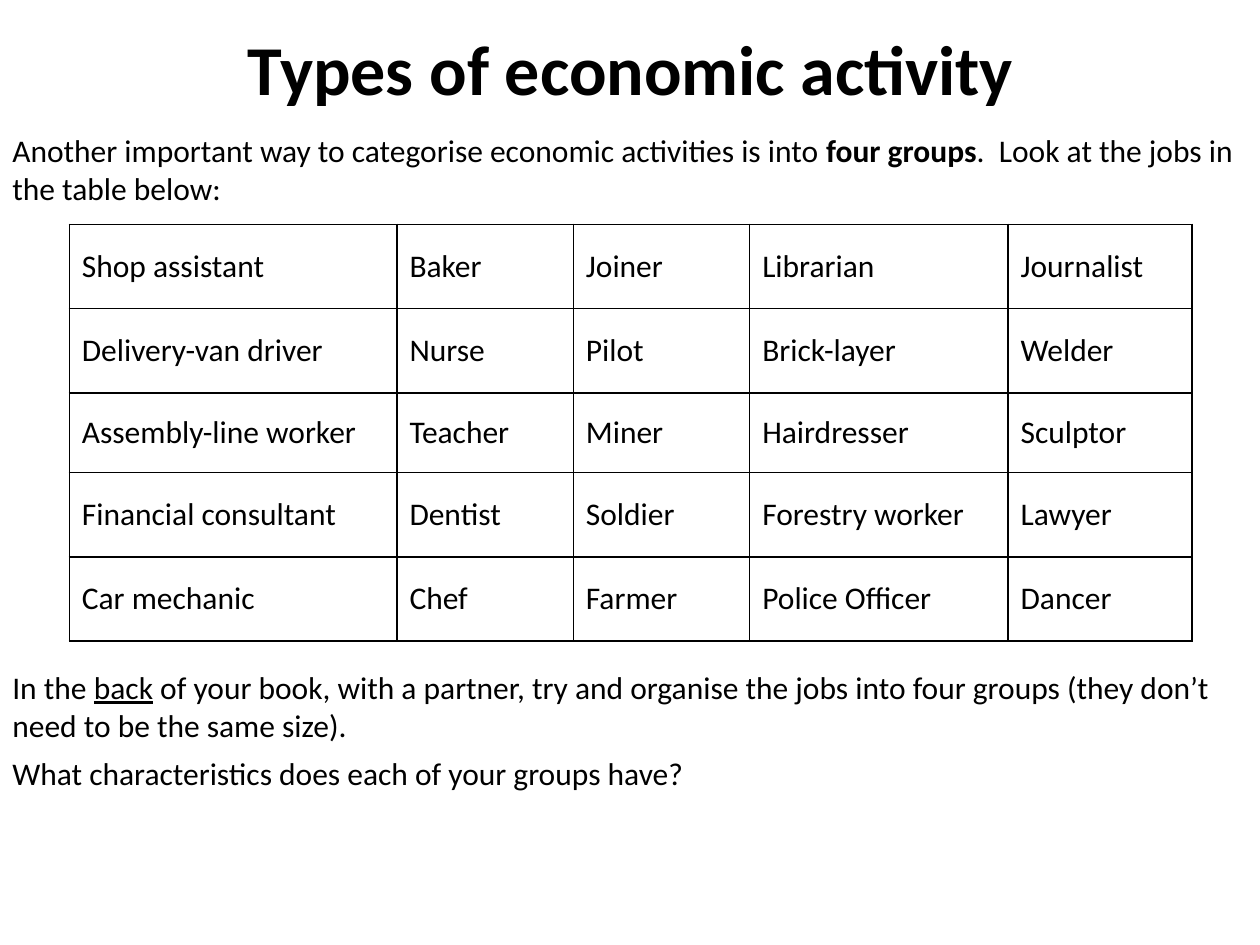
"""Build a slide on types of economic activity with a table of jobs."""
from dataclasses import dataclass

from lxml import etree
from pptx import Presentation
from pptx import util as u
from pptx.dml.color import RGBColor
from pptx.enum import text
from pptx.oxml import ns

PX = 9144


@dataclass(frozen=True)
class Theme:
    font: str = "Calibri"
    ink: str = "000000"
    head: int = 40
    body: int = 18
    line: int = 1


@dataclass(frozen=True)
class Box:
    left: int
    top: int
    width: int
    height: int

    def emu(self) -> list[int]:
        return [v * PX for v in (self.left, self.top, self.width, self.height)]


@dataclass(frozen=True)
class Part:
    words: str
    bold: bool = False
    under: bool = False


@dataclass(frozen=True)
class Note:
    box: Box
    paras: list[list[Part]]
    after: int = 0


THEME = Theme()
TITLE = Box(20, 16, 961, 75)
GRID = Box(55, 178, 891, 331)
COLS = [260, 140, 140, 205, 146]
ROWS = [67, 67, 63, 67, 67]
JOBS = [
    ["Shop assistant", "Baker", "Joiner", "Librarian", "Journalist"],
    ["Delivery-van driver", "Nurse", "Pilot", "Brick-layer", "Welder"],
    ["Assembly-line worker", "Teacher", "Miner", "Hairdresser", "Sculptor"],
    ["Financial consultant", "Dentist", "Soldier", "Forestry worker", "Lawyer"],
    ["Car mechanic", "Chef", "Farmer", "Police Officer", "Dancer"],
]
NOTES = [
    Note(Box(0, 99, 1000, 71), [[
        Part("Another important way to categorise economic activities is into "),
        Part("four groups", bold=True),
        Part(".  Look at the jobs in the table below:"),
    ]]),
    Note(Box(0, 525, 1000, 109), [
        [
            Part("In the "),
            Part("back", under=True),
            Part(" of your book, with a partner, try and organise the jobs "
                 "into four groups (they don’t need to be the same size)."),
        ],
        [Part("What characteristics does each of your groups have?")],
    ], after=6),
]


def style(run, size: int, bold: bool = False, under: bool = False) -> None:
    font = run.font
    font.name, font.size = THEME.font, u.Pt(size)
    font.bold, font.underline = bold, under
    font.color.rgb = RGBColor.from_string(THEME.ink)


def draw_title(shape, words: str) -> None:
    shape.left, shape.top, shape.width, shape.height = TITLE.emu()
    frame = shape.text_frame
    frame.text = words
    frame.auto_size = text.MSO_AUTO_SIZE.NONE
    frame.vertical_anchor = text.MSO_ANCHOR.MIDDLE
    frame.margin_left = frame.margin_right = 4 * PX
    frame.margin_top = frame.margin_bottom = 4 * PX
    para = frame.paragraphs[0]
    para.alignment = text.PP_ALIGN.CENTER
    style(para.runs[0], THEME.head, bold=True)


def draw_note(slide, note: Note) -> None:
    frame = slide.shapes.add_textbox(*note.box.emu()).text_frame
    frame.word_wrap = True
    for i, parts in enumerate(note.paras):
        para = frame.add_paragraph() if i else frame.paragraphs[0]
        para.space_after = u.Pt(note.after)
        for part in parts:
            run = para.add_run()
            run.text = part.words
            style(run, THEME.body, part.bold, part.under)


def edge(cell) -> None:
    props = cell._tc.get_or_add_tcPr()
    for i, side in enumerate(("lnL", "lnR", "lnT", "lnB")):
        line = etree.Element(ns.qn(f"a:{side}"), w=str(u.Pt(THEME.line)))
        fill = etree.SubElement(line, ns.qn("a:solidFill"))
        etree.SubElement(fill, ns.qn("a:srgbClr"), val=THEME.ink)
        props.insert(i, line)


def draw_grid(slide) -> None:
    table = slide.shapes.add_table(len(ROWS), len(COLS), *GRID.emu()).table
    table.first_row = table.horz_banding = False
    for col, width in zip(table.columns, COLS):
        col.width = width * PX
    for row, height, jobs in zip(table.rows, ROWS, JOBS):
        row.height = height * PX
        for cell, job in zip(row.cells, jobs):
            cell.text_frame.text = job
            cell.vertical_anchor = text.MSO_ANCHOR.MIDDLE
            cell.fill.background()
            style(cell.text_frame.paragraphs[0].runs[0], THEME.body)
            edge(cell)


def main() -> None:
    deck = Presentation()
    deck.slide_width, deck.slide_height = 1000 * PX, 750 * PX
    slide = deck.slides.add_slide(deck.slide_layouts[5])
    draw_title(slide.shapes.title, "Types of economic activity")
    draw_grid(slide)
    for note in NOTES:
        draw_note(slide, note)
    deck.save("out.pptx")


if __name__ == "__main__":
    main()
